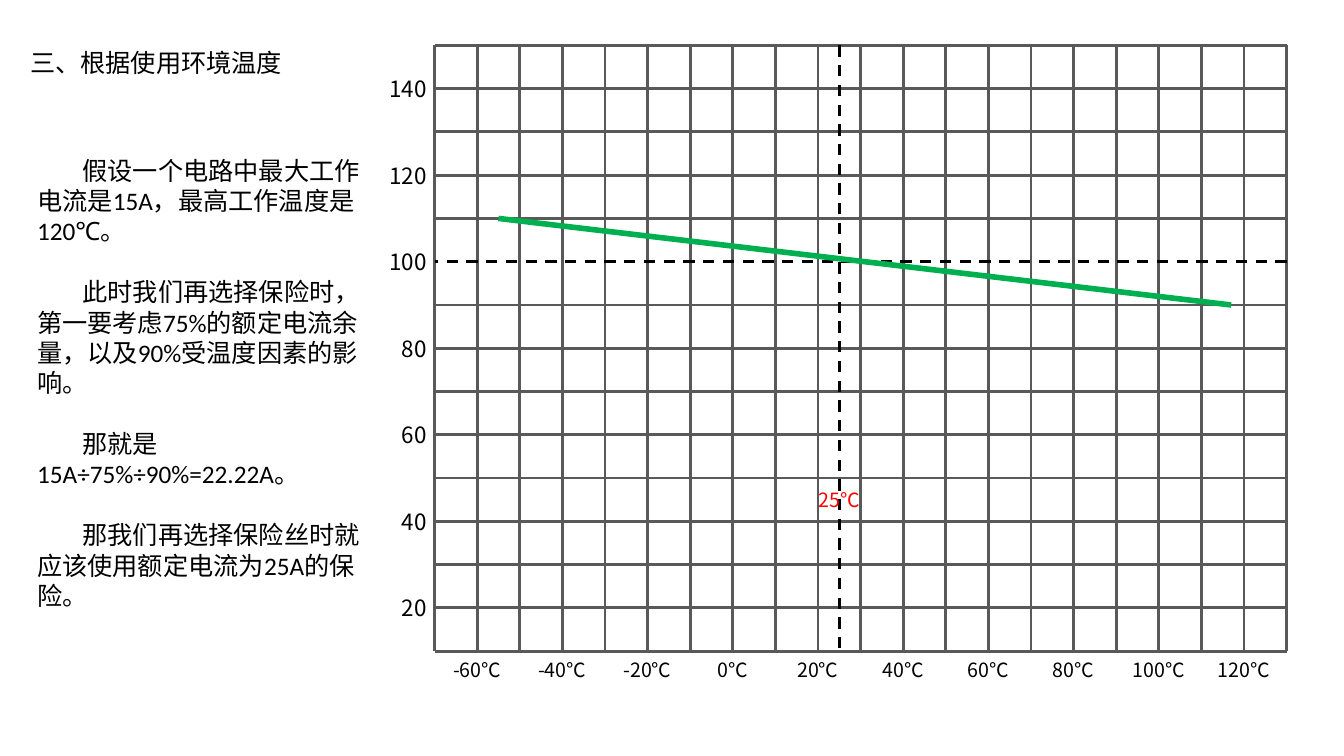
import pptx
import pptx.dml.color
import pptx.enum.dml
import pptx.enum.shapes
import pptx.enum.text
import pptx.oxml.ns
import pptx.util
from lxml import etree

Inches = pptx.util.Inches
Pt = pptx.util.Pt
ALIGN = pptx.enum.text.PP_ALIGN
ANCHOR = pptx.enum.text.MSO_ANCHOR

TITLE = "三、根据使用环境温度"
BODY = [
    "假设一个电路中最大工作电流是15A，最高工作温度是120℃。",
    "此时我们再选择保险时，第一要考虑75%的额定电流余量，以及90%受温度因素的影响。",
    "那就是15A÷75%÷90%=22.22A。",
    "那我们再选择保险丝时就应该使用额定电流为25A的保险。",
]
TEMPERATURES = range(-70, 131, 10)
PERCENTS = range(150, 9, -10)
TEMPERATURE_LABELS = range(-60, 121, 20)
PERCENT_LABELS = range(140, 19, -20)
DERATING = [(-55, 110), (117, 90)]
REFERENCE_TEMPERATURE, REFERENCE_PERCENT = 25, 100

LEFT, TOP, RIGHT, BOTTOM = 4.31, 0.45, 12.76, 6.46
GRID, BLACK, GREEN, RED = "595959", "000000", "00B050", "FF0000"
LABEL_FONT = "Noto Sans CJK SC"


def rgb(value):
    return pptx.dml.color.RGBColor.from_string(value)


def x_at(temperature):
    return LEFT + (temperature + 70) / 200 * (RIGHT - LEFT)


def y_at(percent):
    return TOP + (150 - percent) / 140 * (BOTTOM - TOP)


def add_line(s, start, end, color=GRID, width=2, dashed=False):
    points = [Inches(v) for v in (*start, *end)]
    line = s.shapes.add_connector(pptx.enum.shapes.MSO_CONNECTOR.STRAIGHT, *points)
    line.line.color.rgb = rgb(color)
    line.line.width = Pt(width)
    if dashed:
        line.line.dash_style = pptx.enum.dml.MSO_LINE.DASH
    etree.SubElement(line._element.spPr, pptx.oxml.ns.qn("a:effectLst"))


def add_text(s, text, box, size=18, font="Calibri", color=BLACK,
             align=ALIGN.LEFT, anchor=ANCHOR.TOP, wrap=True, indent=0, gap=0):
    sp = s.shapes.add_textbox(*[Inches(v) for v in box])
    tf = sp.text_frame
    tf.word_wrap = wrap
    tf.vertical_anchor = anchor
    for i, content in enumerate([text] if isinstance(text, str) else text):
        p = tf.paragraphs[0] if i == 0 else tf.add_paragraph()
        p.alignment = align
        if indent:
            p._p.get_or_add_pPr().set("indent", str(Inches(indent)))
        if i and gap:
            p.space_before = Pt(gap)
        r = p.add_run()
        r.text = content
        r.font.size = Pt(size)
        r.font.name = font
        r.font.color.rgb = rgb(color)


def add_temperature(s, temperature, top, color=BLACK):
    add_text(s, f"{temperature}℃", (x_at(temperature) - 0.37, top, 0.74, 0.38),
             size=14, font=LABEL_FONT, color=color, align=ALIGN.CENTER,
             anchor=ANCHOR.MIDDLE, wrap=False)


def main():
    prs = pptx.Presentation()
    prs.slide_width, prs.slide_height = Inches(13.33), Inches(7.5)
    s = prs.slides.add_slide(prs.slide_layouts[6])

    add_text(s, TITLE, (0.2, 0.42, 3.04, 0.4))
    for temperature in TEMPERATURES:
        x = x_at(temperature)
        add_line(s, (x, TOP), (x, BOTTOM))
    for percent in PERCENTS:
        y = y_at(percent)
        reference = percent == REFERENCE_PERCENT
        add_line(s, (RIGHT, y), (LEFT, y), BLACK if reference else GRID, dashed=reference)
    x = x_at(REFERENCE_TEMPERATURE)
    add_line(s, (x, TOP), (x, BOTTOM), BLACK, dashed=True)

    for percent in PERCENT_LABELS:
        add_text(s, str(percent), (3.73, y_at(percent) - 0.21, 0.6, 0.42), size=16,
                 font=LABEL_FONT, align=ALIGN.RIGHT, anchor=ANCHOR.MIDDLE, wrap=False)
    start, end = [(x_at(t), y_at(v)) for t, v in DERATING]
    add_line(s, start, end, GREEN, 4)
    for temperature in TEMPERATURE_LABELS:
        add_temperature(s, temperature, 6.45)
    add_temperature(s, REFERENCE_TEMPERATURE, 4.77, RED)

    add_text(s, BODY, (0.27, 1.49, 3.42, 4.64), indent=0.45, gap=22)
    prs.save("out.pptx")


if __name__ == "__main__":
    main()
